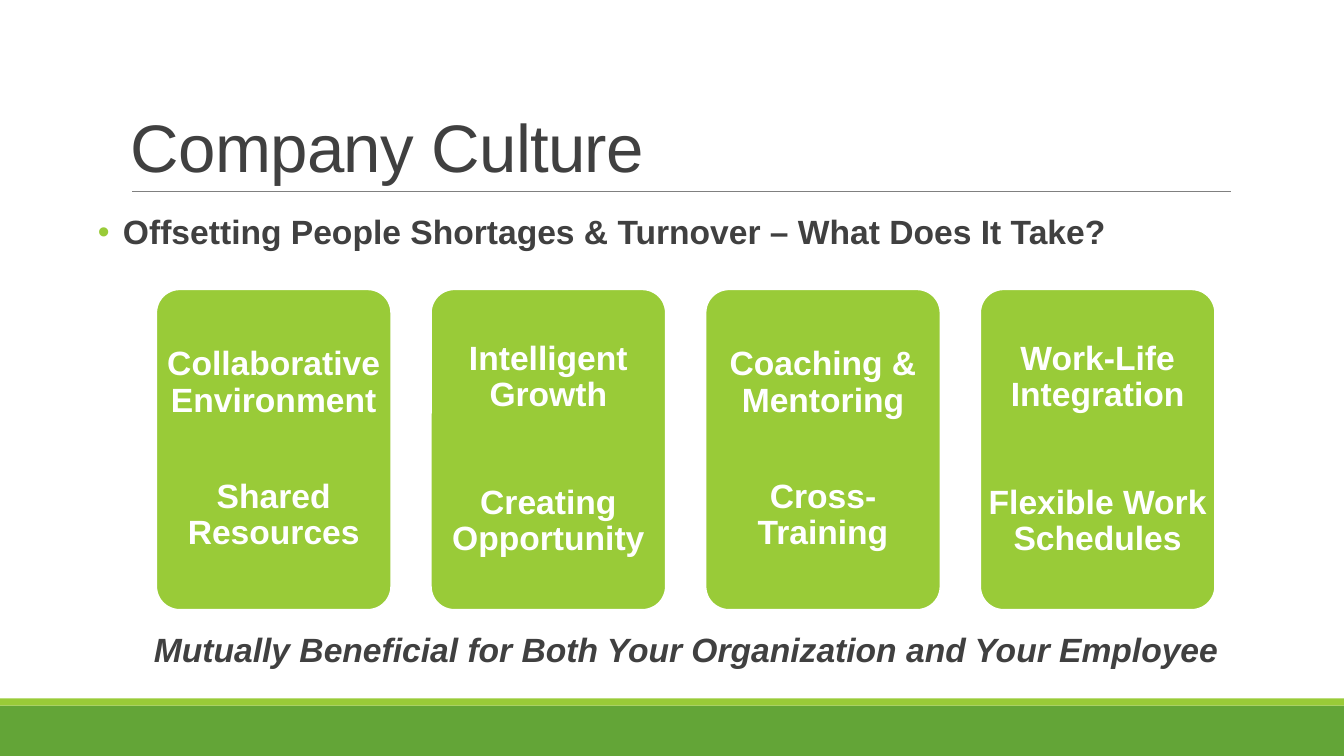
from dataclasses import dataclass

from lxml.etree import SubElement
from pptx import Presentation
from pptx.dml.color import RGBColor
from pptx.enum.shapes import MSO_CONNECTOR, MSO_SHAPE
from pptx.enum.text import MSO_ANCHOR, PP_ALIGN
from pptx.oxml.ns import qn
from pptx.shapes.autoshape import Shape
from pptx.slide import Slide
from pptx.text.text import TextFrame, _Paragraph
from pptx.util import Inches, Pt

DARK_GREEN = RGBColor(0x63, 0xA5, 0x37)
LIME = RGBColor(0x99, 0xCB, 0x38)
GRAY = RGBColor(0x80, 0x80, 0x80)
CHARCOAL = RGBColor(0x40, 0x40, 0x40)
WHITE = RGBColor(0xFF, 0xFF, 0xFF)

CARD_LEFT = 1.55
CARD_STEP = 2.724


@dataclass(frozen=True)
class Card:
    upper: str
    lower: str
    gap: float


@dataclass(frozen=True)
class Band:
    top: float
    height: float
    color: RGBColor


CARDS = [
    Card("Collaborative Environment", "Shared Resources", 43),
    Card("Intelligent Growth", "Creating Opportunity", 51),
    Card("Coaching & Mentoring", "Cross-Training", 43),
    Card("Work-Life Integration", "Flexible Work Schedules", 51),
]
BANDS = [Band(7, 0.5, DARK_GREEN), Band(6.93, 0.07, LIME)]


def write(para: _Paragraph, text: str, *, size: float = 24, color: RGBColor = CHARCOAL,
          bold: bool = True, italic: bool = False, spacing: float = 0.9,
          align: PP_ALIGN = PP_ALIGN.LEFT, tracking: int = 0) -> None:
    para.alignment = align
    para.line_spacing = spacing
    span = para.add_run()
    span.text = text
    font = span.font
    font.name = "Arial"
    font.size = Pt(size)
    font.bold = bold
    font.italic = italic
    font.color.rgb = color
    if tracking:
        font._element.set("spc", str(tracking))


def set_margins(frame: TextFrame, horizontal: float, vertical: float) -> None:
    frame.word_wrap = True
    frame.margin_left = frame.margin_right = Inches(horizontal)
    frame.margin_top = frame.margin_bottom = Inches(vertical)


def add_text_box(page: Slide, left: float, top: float, width: float, height: float,
                 horizontal_margin: float = 0) -> TextFrame:
    box = page.shapes.add_textbox(Inches(left), Inches(top), Inches(width), Inches(height))
    set_margins(box.text_frame, horizontal_margin, 0.05)
    return box.text_frame


def add_filled_shape(page: Slide, kind: MSO_SHAPE, left: float, top: float,
                     width: float, height: float, color: RGBColor) -> Shape:
    shape = page.shapes.add_shape(kind, Inches(left), Inches(top), Inches(width), Inches(height))
    shape.shadow.inherit = False
    shape.fill.solid()
    shape.fill.fore_color.rgb = color
    shape.line.fill.background()
    return shape


def add_bullet(para: _Paragraph, color: RGBColor) -> None:
    properties = para._p.get_or_add_pPr()
    properties.set("marL", str(Inches(0.25)))
    properties.set("indent", str(-Inches(0.25)))
    bullet_color = SubElement(properties, qn("a:buClr"))
    SubElement(bullet_color, qn("a:srgbClr")).set("val", str(color))
    SubElement(properties, qn("a:buFont")).set("typeface", "Arial")
    SubElement(properties, qn("a:buChar")).set("char", "•")


def add_title_rule(page: Slide) -> None:
    rule = page.shapes.add_connector(
        MSO_CONNECTOR.STRAIGHT, Inches(1.31), Inches(1.9), Inches(12.21), Inches(1.9))
    rule.line.color.rgb = GRAY
    rule.line.width = Pt(0.5)
    SubElement(rule._element.spPr, qn("a:effectLst"))


def add_card(page: Slide, card: Card, left: float) -> None:
    shape = add_filled_shape(page, MSO_SHAPE.ROUNDED_RECTANGLE, left, 2.87, 2.33, 3.18, LIME)
    shape.adjustments[0] = 0.1
    shape.line.color.rgb = WHITE
    shape.line.width = Pt(1.25)
    frame = shape.text_frame
    set_margins(frame, 0, 0)
    frame.vertical_anchor = MSO_ANCHOR.MIDDLE
    upper = frame.paragraphs[0]
    write(upper, card.upper, color=WHITE, align=PP_ALIGN.CENTER)
    upper.space_after = Pt(card.gap)
    write(frame.add_paragraph(), card.lower, color=WHITE, align=PP_ALIGN.CENTER)


def main() -> None:
    deck = Presentation()
    deck.slide_width = Inches(13.33)
    deck.slide_height = Inches(7.5)
    page = deck.slides.add_slide(deck.slide_layouts[6])

    for band in BANDS:
        add_filled_shape(page, MSO_SHAPE.RECTANGLE, 0, band.top, 13.33, band.height, band.color)
    add_title_rule(page)

    title = add_text_box(page, 1.2, 0.31, 11, 1.59, horizontal_margin=0.1)
    title.vertical_anchor = MSO_ANCHOR.BOTTOM
    write(title.paragraphs[0], "Company Culture", size=48, bold=False, spacing=0.85, tracking=-50)

    question = add_text_box(page, 0.97, 2.09, 11.67, 0.5).paragraphs[0]
    add_bullet(question, LIME)
    write(question, "Offsetting People Shortages & Turnover – What Does It Take?")

    for index, card in enumerate(CARDS):
        add_card(page, card, CARD_LEFT + index * CARD_STEP)

    closing = add_text_box(page, 0.97, 6.24, 11.67, 0.5).paragraphs[0]
    write(closing, "Mutually Beneficial for Both Your Organization and Your Employee",
          italic=True, align=PP_ALIGN.CENTER)

    deck.save("out.pptx")


if __name__ == "__main__":
    main()
